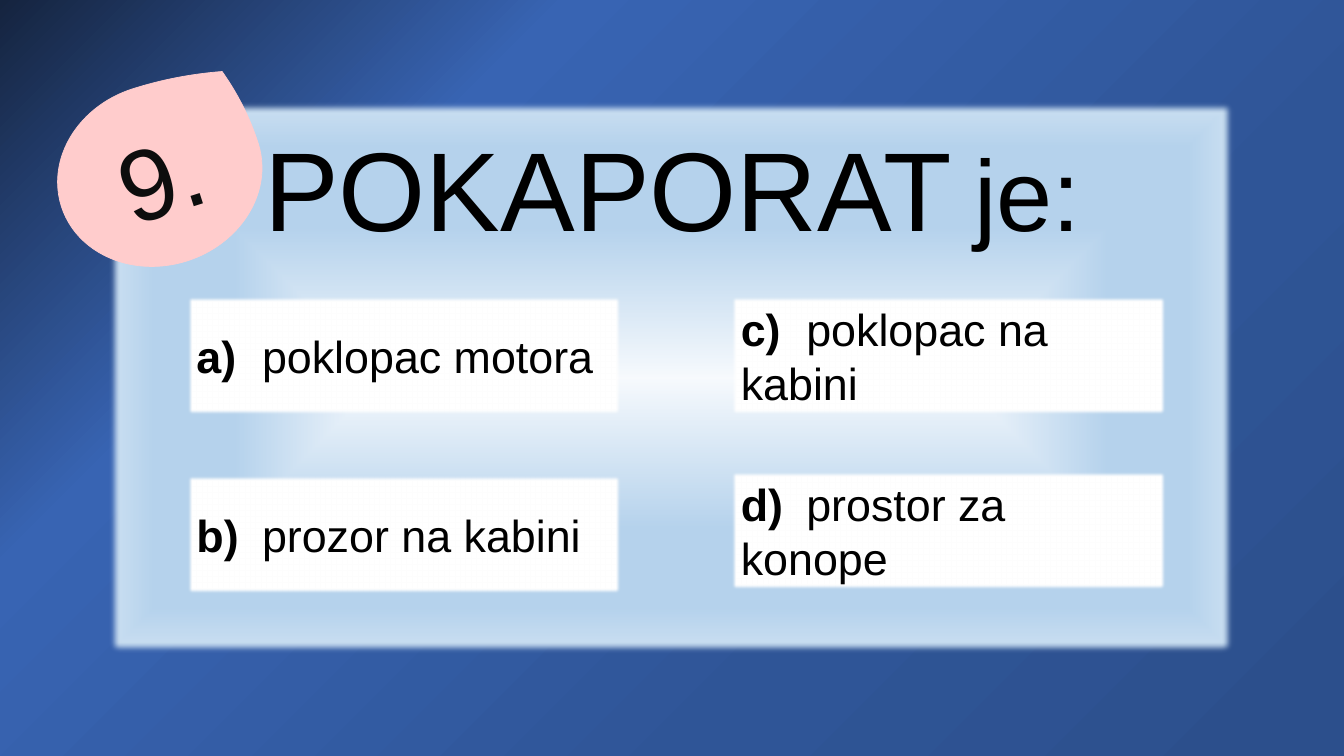
from dataclasses import dataclass

from lxml import etree
from pptx import Presentation
from pptx import util as u
from pptx.dml.color import RGBColor
from pptx.enum import shapes, text
from pptx.oxml.ns import qn

Stops = tuple[tuple[int, str], ...]


@dataclass(frozen=True)
class Theme:
    backdrop: Stops = ((0, "15243F"), (27, "3864B3"), (69, "2F5597"), (97, "2C4F8C"))
    panel: Stops = ((0, "F7FAFD"), (54, "B5D2EC"), (83, "B5D2EC"), (100, "CEE1F2"))
    card: str = "FFFFFF"
    badge: str = "FFCCCC"
    ink: str = "000000"
    badge_ink: str = "0D0D0D"
    font: str = "Arial"
    gap_font: str = "Calibri"
    term_size: int = 80
    gap_size: int = 66
    large_size: int = 72
    answer_size: int = 32


@dataclass(frozen=True)
class Box:
    """Place and size in percent of the slide's width and height."""
    left: float
    top: float
    width: float
    height: float


@dataclass(frozen=True)
class Run:
    words: str
    size: int
    bold: bool = False
    font: str = Theme.font
    color: str = Theme.ink


@dataclass(frozen=True)
class Answer:
    letter: str
    words: str
    left: float
    top: float


THEME = Theme()
WIDTH, HEIGHT = u.Inches(13.333), u.Inches(7.5)
PANEL = Box(8.03, 13.33, 84, 73.33)
BADGE = Box(4.2, 11.2, 15.38, 23.87)
CARD_WIDTH, CARD_HEIGHT = 32.4, 15.87
LEFT_COLUMN, RIGHT_COLUMN = 13.88, 54.38
TOP_ROW = 39.07
ANSWERS = (
    Answer("a)", "poklopac motora", LEFT_COLUMN, TOP_ROW),
    Answer("c)", "poklopac na kabini", RIGHT_COLUMN, TOP_ROW),
    Answer("b)", "prozor na kabini", LEFT_COLUMN, 62.8),
    Answer("d)", "prostor za konope", RIGHT_COLUMN, 62.27),
)


def set_gradient(parent, stops: Stops, angle: int | None = None) -> None:
    """Replace a solid fill by a linear gradient, or a centred one without angle."""
    solid = parent.find(qn("a:solidFill"))
    grad = etree.Element(qn("a:gradFill"), rotWithShape="1")
    stop_list = etree.SubElement(grad, qn("a:gsLst"))
    for percent, color in stops:
        stop = etree.SubElement(stop_list, qn("a:gs"), pos=str(percent * 1000))
        etree.SubElement(stop, qn("a:srgbClr"), val=color)
    if angle is None:
        path = etree.SubElement(grad, qn("a:path"))
        path.set("path", "shape")
        sides = {side: "50000" for side in "ltrb"}
        etree.SubElement(path, qn("a:fillToRect"), sides)
    else:
        etree.SubElement(grad, qn("a:lin"), ang=str(angle * 60000), scaled="0")
    parent.replace(solid, grad)


def soften(sp, radius: float) -> None:
    effects = sp.element.spPr.find(qn("a:effectLst"))
    etree.SubElement(effects, qn("a:softEdge"), rad=str(u.Pt(radius)))


def add_block(slide, kind, box: Box, color: str):
    sp = slide.shapes.add_shape(
        kind,
        int(WIDTH * box.left / 100), int(HEIGHT * box.top / 100),
        int(WIDTH * box.width / 100), int(HEIGHT * box.height / 100),
    )
    sp.shadow.inherit = False
    sp.fill.solid()
    sp.fill.fore_color.rgb = RGBColor.from_string(color)
    sp.line.fill.background()
    return sp


def write(sp, runs: list[Run], align, anchor=text.MSO_ANCHOR.MIDDLE):
    tf = sp.text_frame
    tf.word_wrap = True
    tf.vertical_anchor = anchor
    p = tf.paragraphs[0]
    p.alignment = align
    for item in runs:
        r = p.add_run()
        r.text = item.words
        r.font.size = u.Pt(item.size)
        r.font.bold = item.bold
        r.font.name = item.font
        r.font.color.rgb = RGBColor.from_string(item.color)
    return p


def add_panel(slide) -> None:
    sp = add_block(slide, shapes.MSO_SHAPE.RECTANGLE, PANEL, THEME.card)
    set_gradient(sp.element.spPr, THEME.panel)
    soften(sp, 5)
    sp.text_frame.margin_top = u.Inches(0.19)
    title = [
        Run("POKAPORAT", THEME.term_size),
        Run(" ", THEME.gap_size, True, THEME.gap_font),
        Run("je:", THEME.large_size),
    ]
    write(sp, title, text.PP_ALIGN.CENTER, text.MSO_ANCHOR.TOP)


def add_answer(slide, answer: Answer) -> None:
    box = Box(answer.left, answer.top, CARD_WIDTH, CARD_HEIGHT)
    sp = add_block(slide, shapes.MSO_SHAPE.RECTANGLE, box, THEME.card)
    soften(sp, 2.5)
    runs = [
        Run(f"{answer.letter}\t", THEME.answer_size, True),
        Run(answer.words, THEME.answer_size),
    ]
    p = write(sp, runs, text.PP_ALIGN.LEFT)
    # Tab stop between letter and answer
    tabs = etree.SubElement(p._p.get_or_add_pPr(), qn("a:tabLst"))
    etree.SubElement(tabs, qn("a:tab"), pos=str(u.Inches(0.65)), algn="l")


def add_badge(slide) -> None:
    sp = add_block(slide, shapes.MSO_SHAPE.TEAR, BADGE, THEME.badge)
    sp.adjustments[0] = 0.88
    sp.rotation = 342.2
    sp.line.color.rgb = RGBColor.from_string(THEME.badge)
    sp.line.width = u.Pt(0.5)
    number = Run("9.", THEME.large_size, color=THEME.badge_ink)
    write(sp, [number], text.PP_ALIGN.CENTER)


def main() -> None:
    prs = Presentation()
    prs.slide_width, prs.slide_height = WIDTH, HEIGHT
    slide = prs.slides.add_slide(prs.slide_layouts[6])

    # Backdrop
    slide.background.fill.solid()
    set_gradient(slide.element.find(f".//{qn('p:bgPr')}"), THEME.backdrop, 45)

    # Question panel, answers and number
    add_panel(slide)
    for answer in ANSWERS:
        add_answer(slide, answer)
    add_badge(slide)

    prs.save("out.pptx")


if __name__ == "__main__":
    main()
